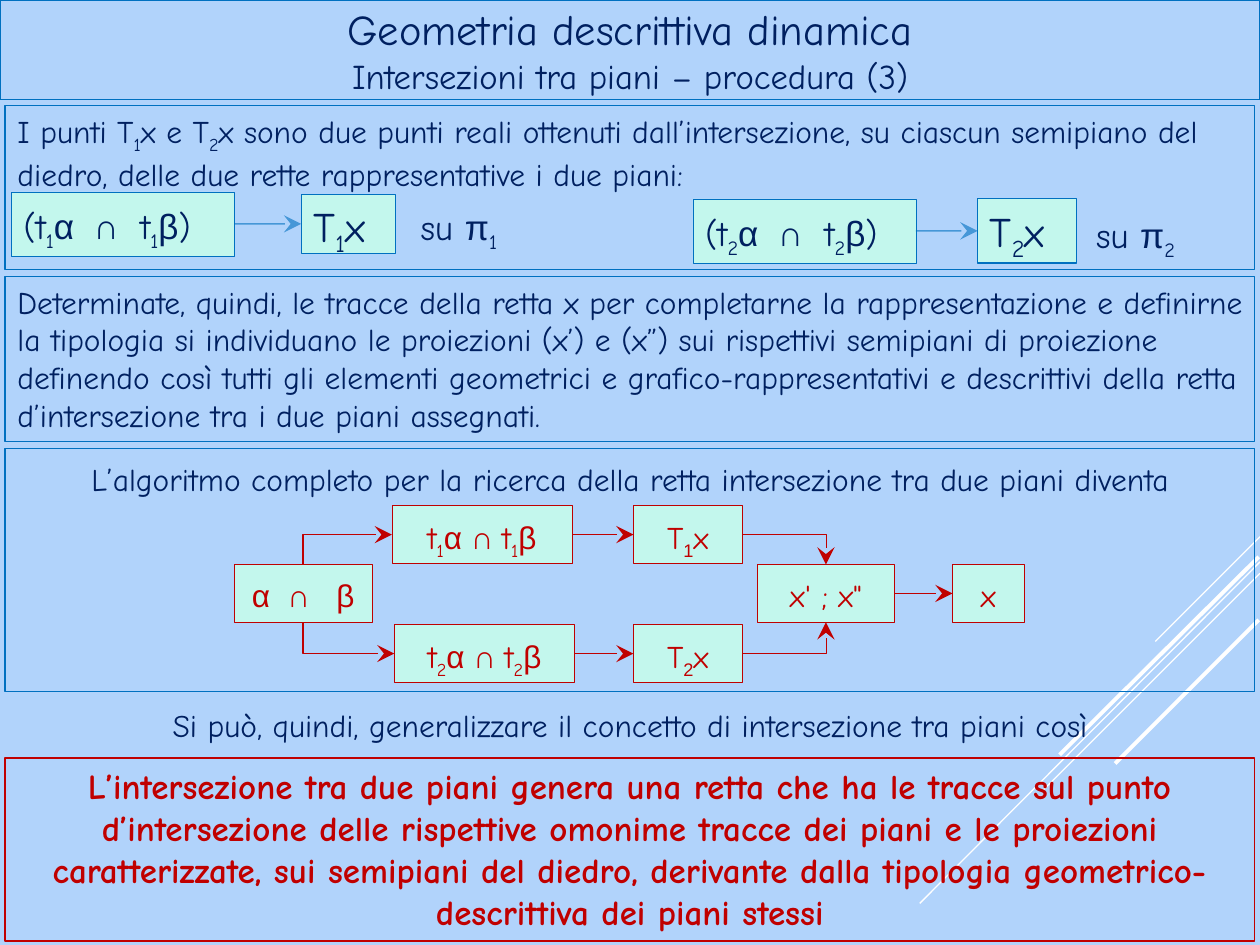
from dataclasses import dataclass
from typing import Optional

from lxml.etree import SubElement
from pptx import Presentation
from pptx.dml.color import RGBColor
from pptx.enum.shapes import MSO_CONNECTOR, MSO_SHAPE
from pptx.enum.text import MSO_ANCHOR, PP_ALIGN
from pptx.oxml.ns import qn
from pptx.util import Pt

COLORS = {
    "bg": "B1D3FB", "white": "FFFFFF", "blue": "0070C0",
    "navy": "002060", "mint": "C3F7ED", "red": "C00000",
}
FONT, MATH_FONT = "Comic Neue", "Arial"
TOP, LEFT, BOTTOM, RIGHT = 0, 1, 2, 3


@dataclass
class Box:
    x: float
    y: float
    w: float
    h: float
    texts: tuple  # "1" and "2" are set as subscripts
    size: float = 18
    color: str = "navy"
    line: Optional[str] = "blue"
    weight: float = 0.75
    fill: Optional[str] = None
    align: PP_ALIGN = PP_ALIGN.LEFT
    spacing: Optional[float] = None
    bold: bool = False
    top: float = 3.6
    right: float = 7.2
    anchor: MSO_ANCHOR = MSO_ANCHOR.TOP
    sub_font: str = FONT


def rgb(name: str) -> RGBColor:
    return RGBColor.from_string(COLORS[name])


def add_texts(p, texts: tuple, sub_font: str) -> None:
    for text in texts:
        r = p.add_run()
        r.text = text
        if text in ("1", "2"):
            r.font.name = sub_font
            r.font._element.set("baseline", "-25000")
        else:
            r.font.name = MATH_FONT if any(c in "αβπ∩" for c in text) else FONT


def draw_box(s, b: Box):
    area = Pt(b.x), Pt(b.y), Pt(b.w), Pt(b.h)
    if b.line:
        sp = s.shapes.add_shape(MSO_SHAPE.RECTANGLE, *area)
        sp.shadow.inherit = False
        sp.line.color.rgb = rgb(b.line)
        sp.line.width = Pt(b.weight)
        if b.fill:
            sp.fill.solid()
            sp.fill.fore_color.rgb = rgb(b.fill)
        else:
            sp.fill.background()
    else:
        sp = s.shapes.add_textbox(*area)
    tf = sp.text_frame
    tf.word_wrap = True
    tf.vertical_anchor = b.anchor
    tf.margin_top, tf.margin_right = Pt(b.top), Pt(b.right)
    p = tf.paragraphs[0]
    p.alignment = b.align
    if b.spacing:
        p.line_spacing = b.spacing
    p.font.size, p.font.bold = Pt(b.size), b.bold
    p.font.color.rgb = rgb(b.color)
    add_texts(p, b.texts, b.sub_font)
    return sp


def draw_line(s, ends: tuple, color: str, weight: float, kind=MSO_CONNECTOR.STRAIGHT):
    cx = s.shapes.add_connector(kind, *(Pt(v) for v in ends))
    cx.line.color.rgb = rgb(color)
    cx.line.width = Pt(weight)
    SubElement(cx._element.spPr, qn("a:effectLst"))
    return cx


def draw_arrow(s, start, start_side: int, end, end_side: int, color: str = "red",
               weight: float = 0.75, elbow: bool = False, alpha: int = 100) -> None:
    kind = MSO_CONNECTOR.ELBOW if elbow else MSO_CONNECTOR.STRAIGHT
    cx = draw_line(s, (0, 0, 0, 0), color, weight, kind)
    tip = "a:tailEnd"
    if elbow:
        cx._element.spPr.find(qn("a:prstGeom")).set("prst", "bentConnector2")
        # This preset leaves its start horizontally
        if start_side in (TOP, BOTTOM):
            start, start_side, end, end_side = end, end_side, start, start_side
            tip = "a:headEnd"
    cx.begin_connect(start, start_side)
    cx.end_connect(end, end_side)
    ln = cx._element.spPr.find(qn("a:ln"))
    if alpha < 100:
        SubElement(ln.find(".//" + qn("a:srgbClr")), qn("a:alpha"), val=str(alpha * 1000))
    SubElement(ln, qn(tip), type="stealth", w="lg", len="lg")


def panel(s, y: float, h: float, texts: tuple, **style):
    return draw_box(s, Box(2.9, y, 714.2, h, texts, **style))


def node(s, x: float, y: float, w: float, *texts: str, sub_font: str = FONT):
    return draw_box(s, Box(x, y, w, 33, texts, color="red", line="red", weight=0.25,
                           fill="mint", align=PP_ALIGN.CENTER, spacing=1.15,
                           sub_font=sub_font))


def draw_trace(s, n: str, x: float, y: float, point: tuple, label: tuple) -> None:
    """Intersection of two traces, its point and the plane it lies on."""
    traces = draw_box(s, Box(x, y, 127.4, 36.7, ("(t", n, "α  ∩ ", " t", n, "β", ")"),
                             size=20, weight=0.25, fill="mint", top=7.2))
    result = draw_box(s, Box(*point, ("T", n, "x"), size=24, fill="mint"))
    draw_box(s, Box(*label, 74, 31.7, ("su ", "π", n), size=20, line=None))
    draw_arrow(s, traces, RIGHT, result, LEFT, "blue", alpha=60)


def main() -> None:
    prs = Presentation()
    prs.slide_width, prs.slide_height = Pt(720), Pt(540)
    s = prs.slides.add_slide(prs.slide_layouts[6])
    s.background.fill.solid()
    s.background.fill.fore_color.rgb = rgb("bg")
    center = PP_ALIGN.CENTER

    # Diagonal background strokes
    for ends, weight in (
        ((720, 306.7, 660.2, 366.5), 0.75),
        ((720, 321.1, 525.6, 516.2), 0.75),
        ((720, 327.6, 596.2, 451.4), 0.75),
        ((719.3, 318.2, 605.5, 431.3), 2.25),
        ((719.3, 354.2, 637.2, 436.3), 2.25),
    ):
        draw_line(s, ends, "white", weight)

    # Title
    title = draw_box(s, Box(0, 0, 720, 56.9, ("Geometria descrittiva dinamica",), size=24.3,
                            align=center, anchor=MSO_ANCHOR.MIDDLE))
    p = title.text_frame.paragraphs[0]
    p.add_line_break()
    add_texts(p, ("Intersezioni tra piani – procedura (3)",), FONT)
    p.runs[-1].font.size = Pt(19.8)

    # Trace points
    panel(s, 60.5, 93.6, (
        "I punti T", "1", "x e T", "2",
        "x sono due punti reali ottenuti dall’intersezione, su ciascun semipiano del "
        "diedro, delle due rette rappresentative i due piani:"))
    draw_trace(s, "1", 6.5, 109.6, (172.1, 111, 53.9, 33.9), (233.3, 113.8))
    draw_trace(s, "2", 396, 113.6, (558.6, 113.6, 56.7, 36.7), (619.2, 118.4))

    # Projections
    panel(s, 157.9, 94.3, (
        "Determinate, quindi, le tracce della retta x per completarne la rappresentazione "
        "e definirne la tipologia si individuano le proiezioni (x’) e (x”) sui rispettivi "
        "semipiani di proiezione definendo così tutti gli elementi geometrici e "
        "grafico-rappresentativi e descrittivi della retta d’intersezione tra i due piani "
        "assegnati.",), right=5)

    # Algorithm flow
    panel(s, 256.3, 139, (
        "L’algoritmo completo per la ricerca della retta intersezione tra due piani diventa",
    ), align=center, spacing=1.15)
    middle = 322.6
    planes = node(s, 134, middle, 78.5, "α  ∩   β")
    projections = node(s, 432.7, middle, 78.5, "x' ; x\"")
    line_x = node(s, 544.3, middle, 41, "x")
    for n, x, y, side in (("1", 224, 289, TOP), ("2", 225.4, 357, BOTTOM)):
        traces = node(s, x, y, 103, "t", n, "α ∩ ", "t", n, "β")
        point = node(s, 362, y, 62, "T", n, "x", sub_font=MATH_FONT)
        draw_arrow(s, planes, side, traces, LEFT, elbow=True)
        draw_arrow(s, traces, RIGHT, point, LEFT)
        draw_arrow(s, point, RIGHT, projections, side, weight=0.25, elbow=True)
    draw_arrow(s, projections, RIGHT, line_x, LEFT)

    # Conclusion
    panel(s, 399.8, 29, (
        "Si può, quindi, generalizzare il concetto di intersezione tra piani così",
    ), line=None, align=center)
    panel(s, 433.2, 104.5, (
        "L’intersezione tra due piani genera una retta che ha le tracce sul punto "
        "d’intersezione delle rispettive omonime tracce dei piani e le proiezioni "
        "caratterizzate, sui semipiani del diedro, derivante dalla tipologia "
        "geometrico-descrittiva dei piani stessi",
    ), size=20, color="red", line="red", bold=True, align=center)

    prs.save("out.pptx")


if __name__ == "__main__":
    main()
